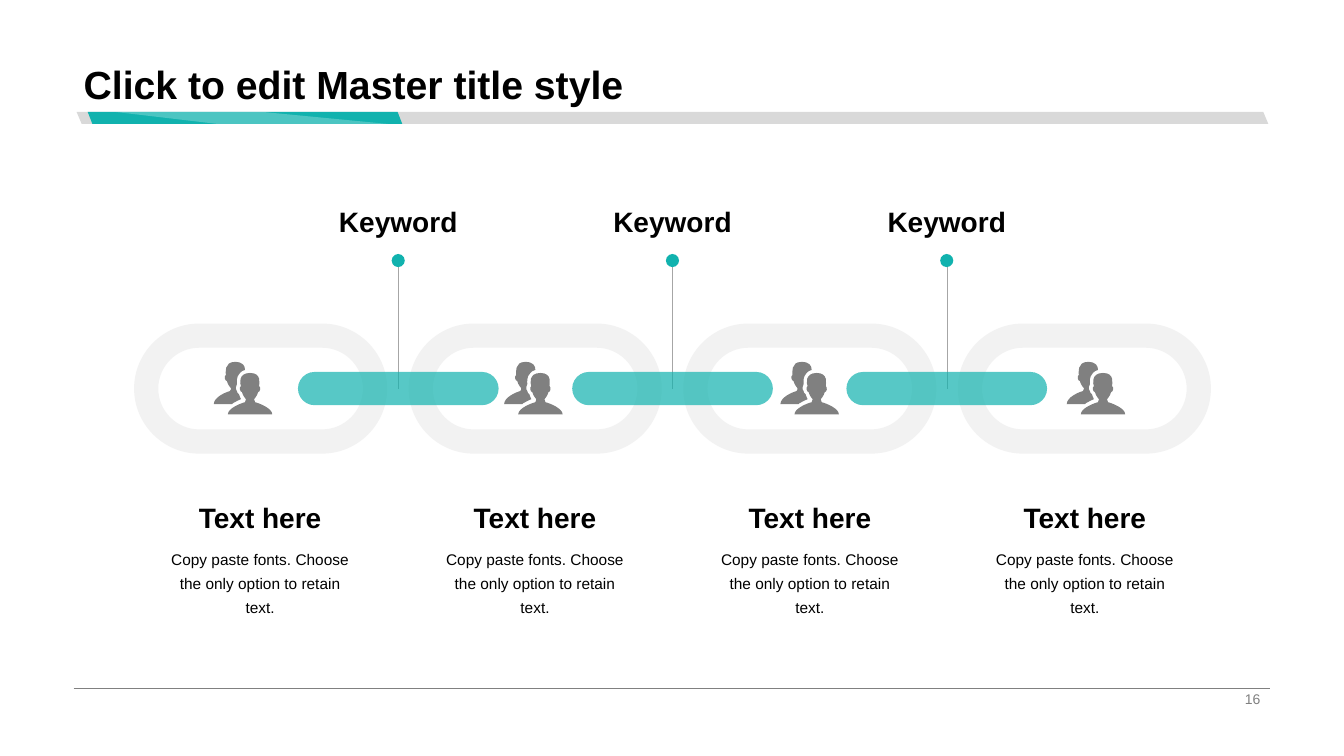
from lxml.etree import SubElement
from pptx import Presentation
from pptx.dml.color import RGBColor
from pptx.enum.shapes import MSO_CONNECTOR, MSO_SHAPE
from pptx.enum.text import MSO_ANCHOR, MSO_AUTO_SIZE, PP_ALIGN
from pptx.oxml.ns import qn
from pptx.util import Inches, Pt

TEAL = RGBColor(0x11, 0xB2, 0xAE)
WHITE = RGBColor(0xFF, 0xFF, 0xFF)
BLACK = RGBColor(0, 0, 0)
RULE_GRAY = RGBColor(0xD9, 0xD9, 0xD9)
RING_GRAY = RGBColor(0xF2, 0xF2, 0xF2)
STEM_GRAY = RGBColor(0xA6, 0xA6, 0xA6)
DARK_GRAY = RGBColor(0x80, 0x80, 0x80)

# Grid, in inches: four ring columns, three joints between them
RING_TOP, RING_WIDTH, RING_HEIGHT, RING_BAND = 3.21, 2.51, 1.29, 0.24
RING_LEFTS = [1.33 + (9.5 - 1.33) / 3 * i for i in range(4)]
CAPTION_LEFTS = [1.54 + (9.72 - 1.54) / 3 * i for i in range(4)]
JOINTS = [6.67 + 2.72 * i for i in (-1, 0, 1)]
CHAIN_Y = RING_TOP + RING_HEIGHT / 2
MARGIN, CONTENT_WIDTH, FOOTER_Y = 0.73, 11.87, 6.83
RULE_TOP, RULE_HEIGHT = 1.11, 0.12
DOT, DOT_TOP = 0.13, 2.52
BAR_WIDTH, BAR_HEIGHT = 1.99, 0.33
BEND = 0.55  # Bézier handle of a quarter circle, as a share of its radius

# Two people in hundredths of an inch: pairs are points, sixes are Bézier curves
PEOPLE_LEFTS, PEOPLE_TOP = (2.12, 5.0, 7.74, 10.58), 3.59
PEOPLE = [
    [(41, 40), (41, 40, 40, 37, 40, 37), (40, 37, 43, 34, 44, 30),
     (46, 30, 47, 25, 45, 24), (45, 22, 48, 11, 36, 11), (24, 11, 26, 22, 27, 24),
     (25, 25, 26, 30, 28, 30), (29, 34, 32, 37, 32, 37), (32, 37, 31, 40, 31, 40),
     (27, 41, 14, 46, 14, 52), (36, 52, 36, 52, 36, 52), (58, 52, 58, 52, 58, 52),
     (58, 46, 45, 41, 41, 40)],
    [(19, 41), (22, 39, 25, 38, 27, 37), (26, 36, 26, 34, 25, 32),
     (24, 32, 23, 30, 23, 29), (22, 28, 22, 27, 22, 25), (22, 24, 22, 23, 23, 22),
     (23, 20, 22, 15, 26, 11), (27, 10, 29, 8, 31, 8), (31, 4, 29, 0, 21, 0),
     (10, 0, 12, 11, 12, 13), (10, 14, 11, 19, 13, 19), (14, 23, 17, 26, 17, 26),
     (17, 26, 17, 29, 16, 29), (12, 30, 0, 35, 0, 42), (18, 42, 18, 42, 18, 42),
     (19, 42, 19, 41, 19, 41)],
]

deck = Presentation()
deck.slide_width, deck.slide_height = Inches(13.33), Inches(7.5)
slide = deck.slides.add_slide(deck.slide_layouts[5])
shapes = slide.shapes


def paint(shape, color, opacity=100):
    shape.shadow.inherit = False
    shape.line.fill.background()
    shape.fill.solid()
    shape.fill.fore_color.rgb = color
    if opacity < 100:
        tint = shape.fill._xPr.find(qn("a:solidFill"))[0]
        SubElement(tint, qn("a:alpha")).set("val", str(opacity * 1000))


def trace(contours):
    scaled = [[[Inches(value) for value in part] for part in contour] for contour in contours]
    builder = shapes.build_freeform(*scaled[0][0], scale=1.0)
    for number, contour in enumerate(scaled):
        if number:
            builder.move_to(*contour[0])
        builder.add_line_segments([part[-2:] for part in contour[1:]], close=True)
    shape = builder.convert_to_shape()
    # Turn segments with two handles into curves
    segments = list(shape._element.iter(qn("a:lnTo")))
    parts = [part for contour in scaled for part in contour[1:]]
    for segment, part in zip(segments, parts):
        if len(part) == 6:
            segment.tag = qn("a:cubicBezTo")
            for place in (0, 1):
                handle = SubElement(segment, qn("a:pt"))
                handle.set("x", str(part[2 * place] - shape.left))
                handle.set("y", str(part[2 * place + 1] - shape.top))
                segment.insert(place, handle)
    return shape


# Rule under the title
for left, width, slant, color in ((0.76, 11.82, 0.42, RULE_GRAY), (0.87, 3.12, 0.39, TEAL)):
    band = shapes.add_shape(MSO_SHAPE.PARALLELOGRAM, Inches(left), Inches(RULE_TOP),
                            Inches(width), Inches(RULE_HEIGHT))
    band.adjustments[0] = slant
    band._element.spPr.xfrm.set("flipH", "1")
    paint(band, color)
RULE_BOTTOM = RULE_TOP + RULE_HEIGHT
gleam = trace([[(3.85, RULE_BOTTOM), (2.6, RULE_TOP), (1.14, RULE_TOP), (2.16, RULE_BOTTOM)]])
paint(gleam, WHITE, 25)

# Footer line and keyword stems
lines = [(MARGIN, FOOTER_Y, MARGIN + CONTENT_WIDTH, FOOTER_Y, DARK_GRAY, 0.5)]
lines += [(x, CHAIN_Y, x, DOT_TOP + DOT, STEM_GRAY, 0.25) for x in JOINTS]
for x1, y1, x2, y2, color, weight in lines:
    line = shapes.add_connector(MSO_CONNECTOR.STRAIGHT, Inches(x1), Inches(y1),
                                Inches(x2), Inches(y2))
    line.line.color.rgb = color
    line.line.width = Pt(weight)
    SubElement(line._element.spPr, qn("a:effectLst"))

# Dots on the stems
for x in JOINTS:
    dot = shapes.add_shape(MSO_SHAPE.OVAL, Inches(x - DOT / 2), Inches(DOT_TOP),
                           Inches(DOT), Inches(DOT))
    paint(dot, TEAL)

# Chain rings: the hole, then the outer edge
for left in RING_LEFTS:
    west, east = left + RING_HEIGHT / 2, left + RING_WIDTH - RING_HEIGHT / 2
    contours = []
    for radius in (RING_HEIGHT / 2 - RING_BAND, RING_HEIGHT / 2):
        top, bottom = CHAIN_Y - radius, CHAIN_Y + radius
        bend = BEND * radius
        contours.append([
            (east, bottom), (west, bottom),
            (west - bend, bottom, west - radius, CHAIN_Y + bend, west - radius, CHAIN_Y),
            (west - radius, CHAIN_Y - bend, west - bend, top, west, top),
            (east, top),
            (east + bend, top, east + radius, CHAIN_Y - bend, east + radius, CHAIN_Y),
            (east + radius, CHAIN_Y + bend, east + bend, bottom, east, bottom),
        ])
    paint(trace(contours), RING_GRAY)

# Bars joining the rings
for x in JOINTS:
    bar = shapes.add_shape(MSO_SHAPE.ROUNDED_RECTANGLE, Inches(x - BAR_WIDTH / 2),
                           Inches(CHAIN_Y - BAR_HEIGHT / 2),
                           Inches(BAR_WIDTH), Inches(BAR_HEIGHT))
    bar.adjustments[0] = 0.5
    paint(bar, TEAL, 70)

# People in the rings
for left in PEOPLE_LEFTS:
    origin = (left, PEOPLE_TOP)
    people = trace([[[origin[i % 2] + value / 100 for i, value in enumerate(part)]
                     for part in person] for person in PEOPLE])
    paint(people, DARK_GRAY)

# Title, keywords, captions and page number
title = shapes.title
title.left, title.top = Inches(MARGIN), 0
title.width, title.height = Inches(CONTENT_WIDTH), Inches(1.12)
texts = [(title, "Click to edit Master title style", 28, True, BLACK,
          PP_ALIGN.LEFT, MSO_ANCHOR.BOTTOM, 0.9)]
labels = [(x - 1.09, 1.97, 2.18, 0.46, "Keyword", 20, True, BLACK,
           PP_ALIGN.CENTER, MSO_ANCHOR.MIDDLE, 1.0) for x in JOINTS]
for left in CAPTION_LEFTS:
    labels += [
        (left, 5.35, 2.08, 0.61, "Copy paste fonts. Choose the only option to retain text.",
         11, False, BLACK, PP_ALIGN.CENTER, MSO_ANCHOR.TOP, 1.3),
        (left, 4.93, 2.08, 0.42, "Text here",
         20, True, BLACK, PP_ALIGN.CENTER, MSO_ANCHOR.BOTTOM, 0.9),
    ]
labels.append((9.42, 6.82, 3.18, 0.23, "16", 10, False, DARK_GRAY,
               PP_ALIGN.RIGHT, MSO_ANCHOR.MIDDLE, 1.0))
for left, top, width, height, *style in labels:
    label = shapes.add_textbox(Inches(left), Inches(top), Inches(width), Inches(height))
    texts.append((label, *style))

for holder, wording, size, bold, color, align, anchor, spacing in texts:
    frame = holder.text_frame
    frame.text = wording
    frame.word_wrap = True
    frame.auto_size = MSO_AUTO_SIZE.NONE
    frame.vertical_anchor = anchor
    paragraph = frame.paragraphs[0]
    paragraph.alignment = align
    paragraph.line_spacing = spacing
    font = paragraph.runs[0].font
    font.name, font.size, font.bold = "Arial", Pt(size), bold
    font.color.rgb = color

deck.save("out.pptx")
